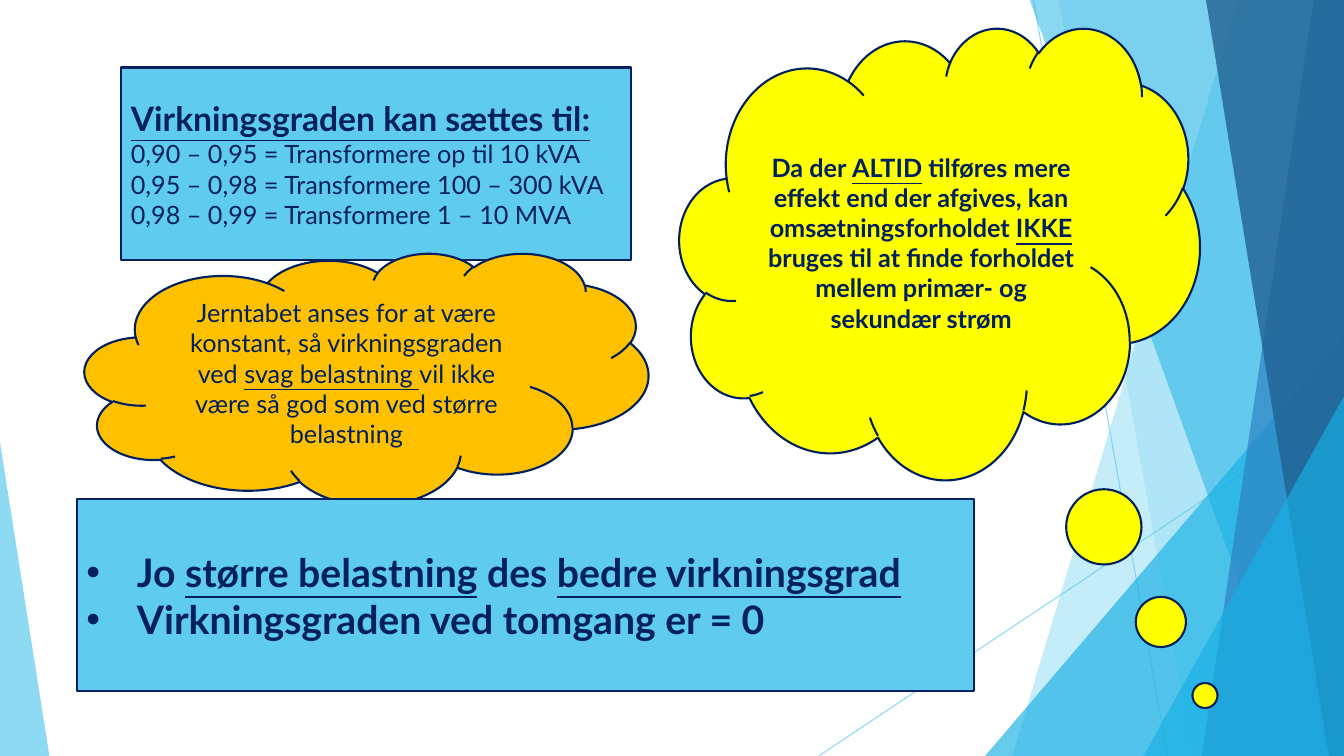
from lxml import etree
from pptx import Presentation
from pptx.dml.color import RGBColor
from pptx.enum.shapes import MSO_CONNECTOR, MSO_SHAPE as SHAPE
from pptx.enum.text import MSO_ANCHOR, PP_ALIGN as ALIGN
from pptx.oxml.ns import qn
from pptx.util import Pt

PX = 9144
WIDTH, HEIGHT = 1333, 750
FONT = "Lato"
NAVY = RGBColor(0x00, 0x20, 0x60)
SKY = RGBColor(0x5F, 0xCB, 0xEF)
CYAN = RGBColor(0x17, 0xB0, 0xE4)
BLUE = RGBColor(0x2E, 0x83, 0xC3)
DEEP_BLUE = RGBColor(0x22, 0x62, 0x92)
YELLOW = RGBColor(0xFF, 0xFF, 0x00)
ORANGE = RGBColor(0xFF, 0xC0, 0x00)


def set_opacity(sp, percent):
    for color in sp._element.spPr.iter(qn("a:srgbClr")):
        etree.SubElement(color, qn("a:alpha")).set("val", str(percent * 1000))


def paint_facet(sp, color, opacity):
    sp.shadow.inherit = False
    sp.fill.solid()
    sp.fill.fore_color.rgb = color
    set_opacity(sp, opacity)
    sp.line.fill.background()


def add_ray(s, x1, y1, x2, y2):
    ray = s.shapes.add_connector(
        MSO_CONNECTOR.STRAIGHT, x1 * PX, y1 * PX, x2 * PX, y2 * PX)
    ray.line.color.rgb = SKY
    ray.line.width = Pt(0.75)
    set_opacity(ray, 70)
    etree.SubElement(ray._element.spPr, qn("a:effectLst"))


def add_band(s, top_x, bottom_x, color, opacity):
    builder = s.shapes.build_freeform(top_x, -1, scale=PX)
    builder.add_line_segments(
        [(WIDTH, -1), (WIDTH, HEIGHT), (bottom_x, HEIGHT)], close=True)
    paint_facet(builder.convert_to_shape(), color, opacity)


def add_corner(s, x, y, w, apex, color, opacity):
    sp = s.shapes.add_shape(
        SHAPE.ISOSCELES_TRIANGLE, x * PX, y * PX, w * PX, (HEIGHT - y) * PX)
    sp.adjustments[0] = apex
    paint_facet(sp, color, opacity)


def add_backdrop(s):
    add_ray(s, 1025, 0, 1158, HEIGHT)
    add_ray(s, WIDTH, 403, 812, HEIGHT)
    add_band(s, 1228, 1004, SKY, 36)
    add_band(s, 1050, 1183, SKY, 20)
    add_corner(s, 977, 333, 356, 1, CYAN, 66)
    add_band(s, 1021, 1291, CYAN, 50)
    add_band(s, 1303, 1192, BLUE, 70)
    add_band(s, 1196, 1318, DEEP_BLUE, 80)
    add_corner(s, 1134, 393, 199, 1, CYAN, 66)
    add_corner(s, 0, 439, 49, 0, SKY, 70)


def add_box(s, kind, x, y, w, h, color):
    sp = s.shapes.add_shape(kind, x * PX, y * PX, w * PX, h * PX)
    sp.shadow.inherit = False
    sp.fill.solid()
    sp.fill.fore_color.rgb = color
    sp.line.color.rgb = NAVY
    sp.line.width = Pt(1.5)
    sp.text_frame.word_wrap = True
    sp.text_frame.vertical_anchor = MSO_ANCHOR.MIDDLE
    return sp


def add_bullet(p):
    pPr = p._p.get_or_add_pPr()
    pPr.set("marL", str(50 * PX))
    pPr.set("indent", str(-50 * PX))
    etree.SubElement(pPr, qn("a:buFont")).set("typeface", "Arial")
    etree.SubElement(pPr, qn("a:buChar")).set("char", "•")


def write_line(p, marked_text, size, bold=False, align=ALIGN.LEFT):
    p.alignment = align
    for i, part in enumerate(marked_text.split("_")):
        if part:
            r = p.add_run()
            r.text = part
            r.font.name = FONT
            r.font.size = Pt(size)
            r.font.bold = bold
            r.font.underline = i % 2 == 1
            r.font.color.rgb = NAVY


def main():
    prs = Presentation()
    prs.slide_width, prs.slide_height = WIDTH * PX, HEIGHT * PX
    s = prs.slides.add_slide(prs.slide_layouts[6])
    add_backdrop(s)

    ratio = add_box(s, SHAPE.CLOUD_CALLOUT, 674, 27, 516, 448, YELLOW)
    ratio.adjustments[0], ratio.adjustments[1] = 0.51, 0.98
    write_line(
        ratio.text_frame.paragraphs[0],
        "Da der _ALTID_ tilføres mere effekt end der afgives, kan "
        "omsætningsforholdet _IKKE_ bruges til at finde forholdet mellem "
        "primær- og sekundær strøm", 18, True, ALIGN.CENTER)

    efficiency = add_box(s, SHAPE.RECTANGLE, 120, 67, 506, 191, SKY)
    tf = efficiency.text_frame
    write_line(tf.paragraphs[0], "_Virkningsgraden kan sættes til:_", 24, True)
    for text in ("0,90 – 0,95 = Transformere op til 10 kVA",
                 "0,95 – 0,98 = Transformere 100 – 300 kVA",
                 "0,98 – 0,99 = Transformere 1 – 10 MVA"):
        write_line(tf.add_paragraph(), text, 18)

    iron_loss = add_box(s, SHAPE.CLOUD, 84, 251, 559, 250, ORANGE)
    write_line(
        iron_loss.text_frame.paragraphs[0],
        "Jerntabet anses for at være konstant, så virkningsgraden ved "
        "_svag belastning _vil ikke være så god som ved større belastning",
        18, align=ALIGN.CENTER)

    conclusion = add_box(s, SHAPE.RECTANGLE, 76, 495, 890, 191, SKY)
    tf = conclusion.text_frame
    for p, text in (
            (tf.paragraphs[0],
             "Jo _større belastning_ des _bedre virkningsgrad_"),
            (tf.add_paragraph(), "Virkningsgraden ved tomgang er = 0")):
        add_bullet(p)
        write_line(p, text, 28, True)

    prs.save("out.pptx")


if __name__ == "__main__":
    main()
